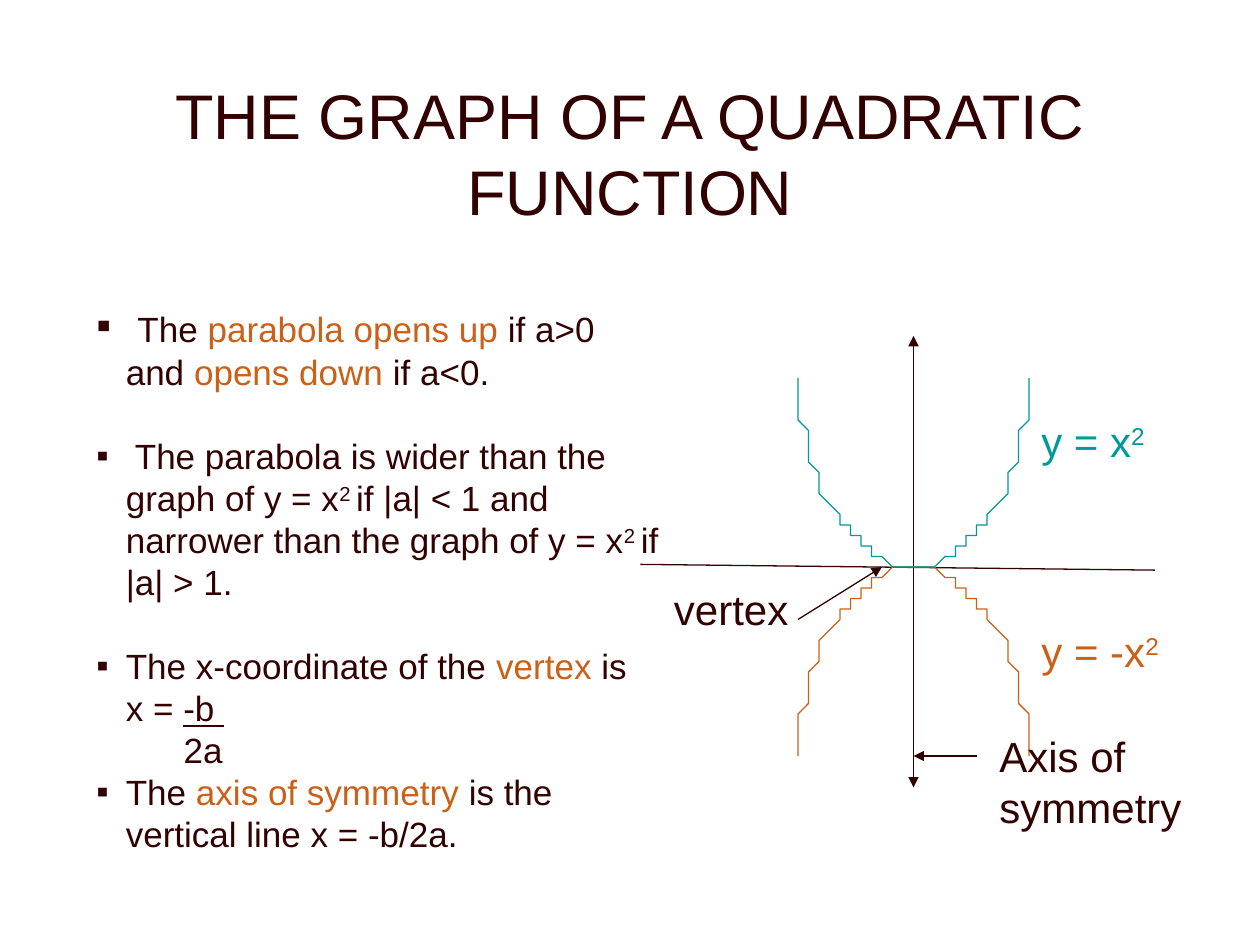
"""Builds a slide on the graph of a quadratic function."""
from math import cos, radians, sin

from pptx import Presentation
from pptx.dml.color import RGBColor as Rgb
from pptx.enum.shapes import MSO_CONNECTOR as Link
from pptx.enum.text import MSO_ANCHOR as Anchor, PP_ALIGN as Align
from pptx.oxml.ns import qn
from pptx.util import Inches, Pt
from lxml.etree import SubElement

THEME = {
    "font": "Arial",
    "title": Rgb.from_string("320000"), "ink": Rgb.from_string("330000"),
    "orange": Rgb.from_string("CC6018"), "teal": Rgb.from_string("009999"),
    "title_size": Pt(36), "label_size": Pt(24), "body_size": Pt(20),
    "line_width": Pt(0.75), "bullet_gap": Pt(24),
}

deck = Presentation()
deck.slide_width, deck.slide_height = Inches(10), Inches(7.5)
slide = deck.slides.add_slide(deck.slide_layouts[6])
COLUMN, ROW = deck.slide_width / 120, deck.slide_height / 90


def add_frame(column, row, columns, rows, wrap=True):
    """Add a text box on the grid and return its text frame."""
    box = slide.shapes.add_textbox(
        int(column * COLUMN), int(row * ROW), int(columns * COLUMN), int(rows * ROW))
    box.text_frame.word_wrap = wrap
    return box.text_frame


def add_run(paragraph, words, color, size, style=""):
    """Add one formatted run, raised or underlined on request."""
    run = paragraph.add_run()
    run.text = words
    look = {"name": THEME["font"], "size": THEME[size], "underline": style == "under" or None}
    for key, value in look.items():
        setattr(run.font, key, value)
    run.font.color.rgb = THEME[color]
    if style == "raised":
        run.font._element.set("baseline", "30000")


title = add_frame(9, 7, 102, 15)
title.vertical_anchor = Anchor.MIDDLE
title.paragraphs[0].alignment = Align.CENTER
add_run(title.paragraphs[0], "THE GRAPH OF A QUADRATIC FUNCTION", "title", "title_size")

VERTEX_X, VERTEX_Y, HALF_WIDTH, DEPTH = 87, 54, 11, 19
arrows = [
    ((61, 53.75), (110, 54.3), ()),
    ((76, 59), (84, VERTEX_Y), ("tailEnd",)),
    ((93, 72), (VERTEX_X, 72), ("tailEnd",)),
    ((VERTEX_X, 32), (VERTEX_X, 75), ("headEnd", "tailEnd")),
]
for (x1, y1), (x2, y2), heads in arrows:
    arrow = slide.shapes.add_connector(
        Link.STRAIGHT, int(x1 * COLUMN), int(y1 * ROW), int(x2 * COLUMN), int(y2 * ROW))
    arrow.line.color.rgb = THEME["ink"]
    arrow.line.width = THEME["line_width"]
    for head in heads:
        SubElement(arrow.line._get_or_add_ln(), qn(f"a:{head}"), type="triangle")
    SubElement(arrow._element.spPr, qn("a:effectLst"))

for color, direction in (("orange", 1), ("teal", -1)):
    points = [
        (VERTEX_X - HALF_WIDTH * cos(radians(angle)),
         VERTEX_Y + direction * DEPTH * (1 - sin(radians(angle))))
        for angle in range(3, 178, 3)
    ]
    outline = slide.shapes.build_freeform(*points[0], scale=(COLUMN, ROW))
    outline.add_line_segments(points[1:], close=False)
    parabola = outline.convert_to_shape()
    parabola.shadow.inherit = False
    parabola.fill.background()
    parabola.line.color.rgb = THEME[color]
    parabola.line.width = THEME["line_width"]

labels = [
    ((63, 55, 13.3, 6, False), "vertex", "", "ink"),
    ((94, 69, 21, 10.8), "Axis of symmetry", "", "ink"),
    ((98, 39, 12.5, 6, False), "y = x", "2", "teal"),
    ((98, 59, 13.8, 6, False), "y = -x", "2", "orange"),
]
for place, words, power, color in labels:
    label = add_frame(*place).paragraphs[0]
    add_run(label, words, color, "label_size")
    if power:
        add_run(label, power, color, "label_size", "raised")

TEXT_INDENT, FRACTION_INDENT = 2.8, 8.3
facts = [
    (True, True, [(" ", "ink", "label_size"), ("The ",), ("parabola opens up", "orange"),
                  (" if a>0 and ",), ("opens down", "orange"), (" if a<0.",)]),
    (True, True, [(" The parabola is wider than the graph of y = x",),
                  ("2 ", "ink", "body_size", "raised"),
                  ("if |a| < 1 and narrower than the graph of y = x",),
                  ("2 ", "ink", "body_size", "raised"), ("if |a| > 1.",)]),
    (True, False, [("The x-coordinate of the ",), ("vertex", "orange"), (" is",), ("\n",),
                   ("x = ",), ("-b ", "ink", "body_size", "under")]),
    (False, False, [("2a",)]),
    (True, False, [("The ",), ("axis of symmetry", "orange"),
                   (" is the vertical line x = -b/2a.",)]),
]
body = add_frame(8, 28, 56, 54)
for number, (bulleted, gap_after, pieces) in enumerate(facts):
    fact = body.add_paragraph() if number else body.paragraphs[0]
    margin = int((TEXT_INDENT if bulleted else FRACTION_INDENT) * COLUMN)
    props = fact._p.get_or_add_pPr()
    props.set("marL", str(margin))
    props.set("indent", str(-margin if bulleted else 0))
    if gap_after:
        fact.space_after = THEME["bullet_gap"]
    if bulleted:
        SubElement(props, qn("a:buFont"), typeface=THEME["font"])
        SubElement(props, qn("a:buChar"), char="▪")
    for words, *look in pieces:
        if words == "\n":
            fact.add_line_break()
        else:
            color, size, style = (*look, *("ink", "body_size", "")[len(look):])
            add_run(fact, words, color, size, style)

deck.save("out.pptx")
